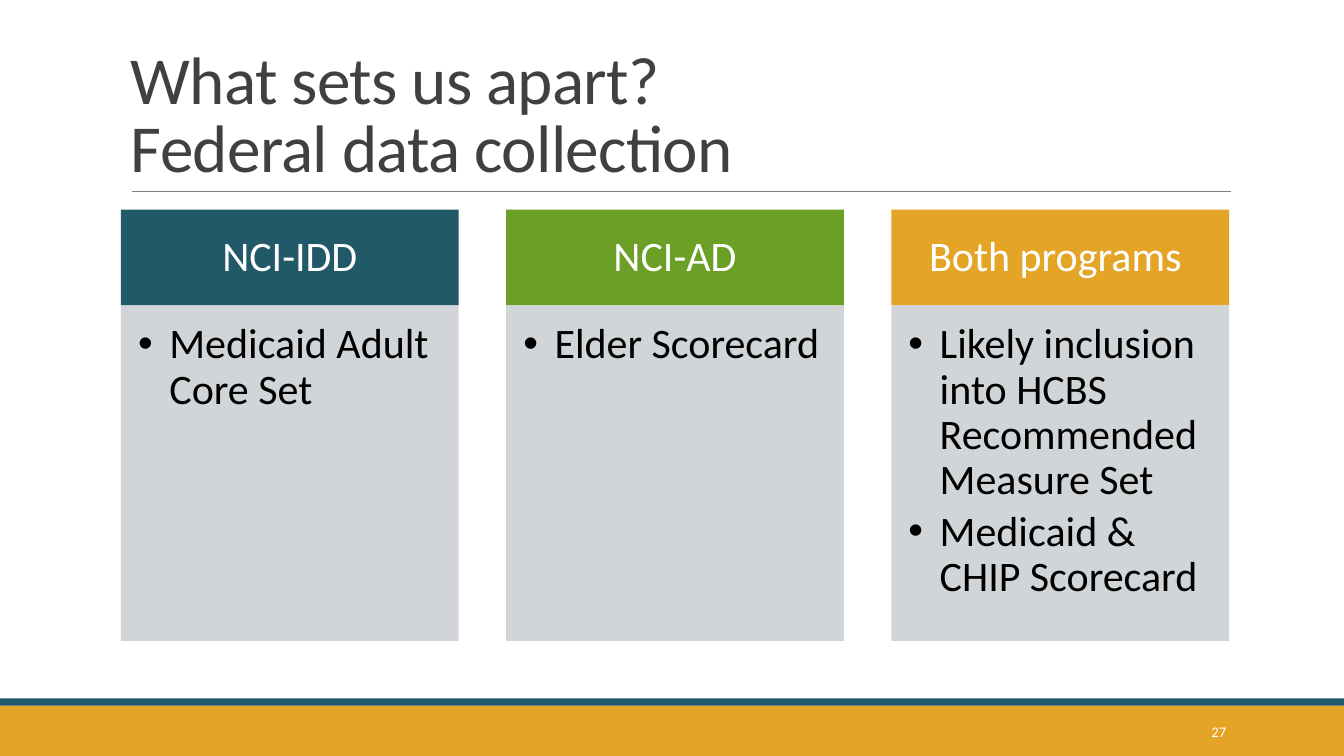
"""Build a slide with three headed columns on federal data collection."""
import pptx
import pptx.util
import pptx.dml.color
import pptx.enum.shapes
import pptx.enum.text
import pptx.oxml.ns
import lxml.etree

THEME = {
    "font": "Calibri",
    "teal": "215968", "green": "6B9F25", "gold": "E4A426",
    "panel": "CDD1D4", "rule": "808080",
    "title": "404040", "body": "000000", "light": "FFFFFF",
    "title_size": 48, "text_size": 30, "number_size": 10.5,
}
Inches, Pt = pptx.util.Inches, pptx.util.Pt
RGB = pptx.dml.color.RGBColor.from_string
qn = pptx.oxml.ns.qn
ALIGN = pptx.enum.text.PP_ALIGN
ANCHOR = pptx.enum.text.MSO_ANCHOR


def add_box(left, top, width, height, color):
    sp = s.shapes.add_shape(pptx.enum.shapes.MSO_SHAPE.RECTANGLE,
                            Inches(left), Inches(top), Inches(width), Inches(height))
    sp.shadow.inherit = False
    sp.fill.solid()
    sp.fill.fore_color.rgb = RGB(THEME[color])
    sp.line.fill.background()
    return sp


def set_text(sp, lines, size, color, align, anchor, insets, spacing=1.0, after=0):
    tf = sp.text_frame
    tf.word_wrap = True
    tf.vertical_anchor = anchor
    tf.margin_left, tf.margin_top, tf.margin_right, tf.margin_bottom = map(Inches, insets)
    tf.text = "\n".join(lines)
    for p in tf.paragraphs:
        p.alignment = align
        p.line_spacing = spacing
        p.space_after = Pt(after)
        for r in p.runs:
            r.font.name = THEME["font"]
            r.font.size = Pt(THEME[size])
            r.font.color.rgb = RGB(THEME[color])
    return tf


prs = pptx.Presentation()
prs.slide_width, prs.slide_height = Inches(13.33), Inches(7.5)
s = prs.slides.add_slide(prs.slide_layouts[6])

add_box(0, 7, 13.33, 0.5, "gold")
add_box(0, 6.93, 13.33, 0.07, "teal")

rule = s.shapes.add_connector(pptx.enum.shapes.MSO_CONNECTOR.STRAIGHT,
                              Inches(1.31), Inches(1.9), Inches(12.21), Inches(1.9))
rule.line.color.rgb = RGB(THEME["rule"])
rule.line.width = Pt(0.5)
lxml.etree.SubElement(rule._element.spPr, qn("a:effectLst"))

default_insets = (0.1, 0.05, 0.1, 0.05)
title = s.shapes.add_textbox(Inches(1.2), Inches(0.31), Inches(11), Inches(1.59))
tf = set_text(title, ["What sets us apart? \vFederal data collection"], "title_size", "title",
              ALIGN.LEFT, ANCHOR.BOTTOM, default_insets, 0.85)
for r in tf.paragraphs[0].runs:
    r.font._element.set("spc", "-50")

columns = [
    ("NCI-IDD", "teal", ["Medicaid Adult Core Set"]),
    ("NCI-AD", "green", ["Elder Scorecard"]),
    ("Both programs ", "gold", ["Likely inclusion into HCBS Recommended Measure Set",
                                "Medicaid & CHIP Scorecard"]),
]
left, pitch, width = 1.2, 3.82, 3.35
head_top, head_height, body_height = 2.08, 0.95, 3.33
for i, (heading, color, points) in enumerate(columns):
    x = left + i * pitch
    head = add_box(x, head_top, width, head_height, color)
    set_text(head, [heading], "text_size", "light", ALIGN.CENTER, ANCHOR.MIDDLE,
             (0.23, 0.13, 0.23, 0.13), 0.9)

    body = add_box(x, head_top + head_height, width, body_height, "panel")
    rgb = body._element.spPr.find(qn("a:solidFill")).find(qn("a:srgbClr"))
    lxml.etree.SubElement(rgb, qn("a:alpha")).set("val", "90000")
    tf = set_text(body, points, "text_size", "body", ALIGN.LEFT, ANCHOR.TOP,
                  (0.17, 0.17, 0.23, 0.26), 0.9, 4.5)
    for p in tf.paragraphs:
        pPr = p._p.get_or_add_pPr()
        pPr.set("marL", str(Inches(0.31)))
        pPr.set("indent", str(-Inches(0.31)))
        lxml.etree.SubElement(pPr, qn("a:buFont")).set("typeface", "Arial")
        lxml.etree.SubElement(pPr, qn("a:buChar")).set("char", "•")

number = s.shapes.add_textbox(Inches(10.83), Inches(7.06), Inches(1.43), Inches(0.4))
set_text(number, ["27"], "number_size", "light", ALIGN.RIGHT, ANCHOR.MIDDLE, default_insets)

prs.save("out.pptx")
